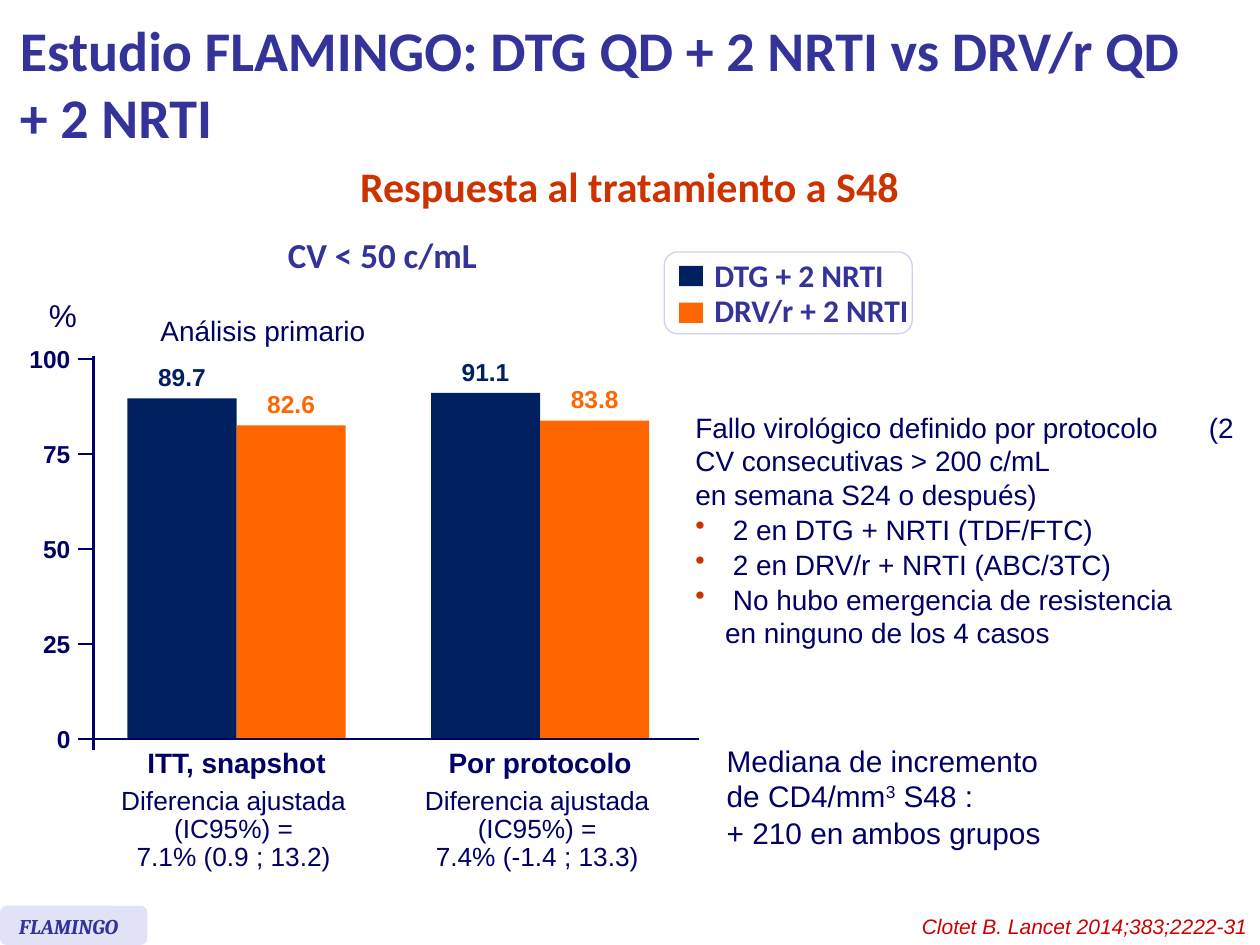
from copy import deepcopy

from lxml import etree
from pptx import Presentation
from pptx import util as u
from pptx.dml.color import RGBColor
from pptx.enum import shapes, text
from pptx.oxml.ns import qn

NAVY, DARK, ORANGE = "000066", "002060", "FF6600"
VIOLET, RED = "333399", "CC3300"
LEFT, MID, RIGHT = text.PP_ALIGN.LEFT, text.PP_ALIGN.CENTER, text.PP_ALIGN.RIGHT

# Chart scale, in cm
BASE, UNIT = 14.9, 0.0766
BAR, FIRST, STEP = 2.2, 2.57, 6.12

GROUPS = [
    ("ITT, snapshot", (89.7, 82.6), "7.1% (0.9 ; 13.2)"),
    ("Por protocolo", (91.1, 83.8), "7.4% (-1.4 ; 13.3)"),
]
SERIES = [("DTG + 2 NRTI", DARK), ("DRV/r + 2 NRTI", ORANGE)]


def rgb(code):
    return RGBColor.from_string(code)


def cm(*vals):
    return [u.Cm(v) for v in vals]


def style(run, size, color, name="Arial", **more):
    for key, val in {"size": u.Pt(size), "name": name, **more}.items():
        setattr(run.font, key, val)
    run.font.color.rgb = rgb(color)


def bullet(para):
    """Give a paragraph a red round bullet with a hanging indent."""
    props = para._p.get_or_add_pPr()
    props.set("marL", str(u.Cm(0.6)))
    props.set("indent", str(-u.Cm(0.6)))
    tint = etree.SubElement(props, qn("a:buClr"))
    etree.SubElement(tint, qn("a:srgbClr")).set("val", RED)
    etree.SubElement(props, qn("a:buChar")).set("char", "•")


def tab(para, pos):
    """Set one left tab stop."""
    stops = etree.SubElement(para._p.get_or_add_pPr(), qn("a:tabLst"))
    stop = etree.SubElement(stops, qn("a:tab"))
    stop.set("pos", str(u.Cm(pos)))
    stop.set("algn", "l")


def label(slide, at, lines, size, color, align=LEFT, wrap=True, mid=False,
          inset=None, gap=0, lead=None, dots=(), stop=None, **font):
    """Add a text box; each line is one paragraph, and \\v breaks a line."""
    frame = slide.shapes.add_textbox(*cm(*at)).text_frame
    frame.word_wrap = wrap
    if mid:
        frame.vertical_anchor = text.MSO_ANCHOR.MIDDLE
    if inset is not None:
        for side in ("left", "top", "right", "bottom"):
            setattr(frame, "margin_" + side, u.Cm(inset))
    for i, line in enumerate(lines):
        para = frame.paragraphs[0] if i == 0 else frame.add_paragraph()
        para.alignment = align
        if lead:
            para.line_spacing = lead
        if i and gap:
            para.space_before = u.Pt(gap)
        if i in dots:
            bullet(para)
        if i == 0 and stop:
            tab(para, stop)
        para.text = line
        for run in para.runs:
            style(run, size, color, **font)
        for brk in para._p.findall(qn("a:br")):
            brk.insert(0, deepcopy(para.runs[0]._r.rPr))
    return frame


def block(slide, at, fill, edge=None, kind=shapes.MSO_SHAPE.RECTANGLE):
    box = slide.shapes.add_shape(kind, *cm(*at))
    box.shadow.inherit = False
    box.fill.solid()
    box.fill.fore_color.rgb = rgb(fill)
    if edge:
        box.line.color.rgb = rgb(edge)
        box.line.width = u.Pt(0.75)
    else:
        box.line.fill.background()


def rule(slide, *ends):
    line = slide.shapes.add_connector(shapes.MSO_CONNECTOR.STRAIGHT, *cm(*ends))
    line.line.color.rgb = rgb(NAVY)
    line.line.width = u.Pt(1.5)
    etree.SubElement(line._element.spPr, qn("a:effectLst"))


def bars(slide):
    for i, (name, vals, diff) in enumerate(GROUPS):
        left = FIRST + i * STEP
        mid = left + BAR
        for j, (val, (_, color)) in enumerate(zip(vals, SERIES)):
            x, tall = left + j * BAR, val * UNIT
            block(slide, (x, BASE - tall, BAR, tall), color)
            label(slide, (x + 0.36, BASE - tall - 0.98, 1.48, 1.12), [str(val)],
                  14, color, MID, wrap=False, inset=0.25, bold=True)
        label(slide, (mid - 2.1, 14.91, 4.2, 0.94), [name], 16, NAVY, MID,
              wrap=False, bold=True)
        label(slide, (mid - 2.6, 15.75, 5.08, 2.01),
              ["Diferencia ajustada", "(IC95%) =", diff], 15, NAVY, MID,
              wrap=False, lead=0.9)


def axes(slide):
    for val in range(0, 101, 25):
        y = BASE - val * UNIT
        label(slide, (0.42, y - 0.3, 1, 0.6), [str(val)], 14, NAVY, RIGHT,
              mid=True, inset=0, bold=True)
        if val:
            rule(slide, 1.57, y, 1.9, y)
    rule(slide, 1.89, 7.18, 1.89, 15.11)
    rule(slide, 1.57, BASE, 14.1, BASE)
    label(slide, (0.71, 5.84, 1.09, 1.02), ["%"], 18, NAVY, RIGHT, wrap=False)


def legend(slide):
    block(slide, (13.39, 5.08, 5, 1.65), "FFFFFF", "D0D0F0",
          shapes.MSO_SHAPE.ROUNDED_RECTANGLE)
    for i, (name, color) in enumerate(SERIES):
        block(slide, (13.69, 5.36 + i * 0.74, 0.48, 0.41), color)
        label(slide, (14.15, 5.03 + i * 0.71, 4.47, 1.02), [name], 18, VIOLET,
              name="Calibri", bold=True, wrap=True)


def notes(slide):
    label(slide, (13.77, 8.1, 11.43, 5.16), [
        "Fallo virológico definido por protocolo\t(2 CV consecutivas > 200 c/mL"
        "\ven semana S24 o después)",
        " 2 en DTG + NRTI (TDF/FTC)",
        " 2 en DRV/r + NRTI (ABC/3TC)",
        " No hubo emergencia de resistencia\ven ninguno de los 4 casos",
    ], 16, NAVY, mid=True, gap=0.8, dots=(1, 2, 3), stop=10.35)
    frame = label(slide, (14.4, 14.83, 10.13, 2.46), [
        "Mediana de incremento\vde CD4/mm", "+ 210 en ambos grupos",
    ], 17, NAVY, mid=True, gap=0.85)
    for part, lift in (("3", "30000"), (" S48 :", "0")):
        run = frame.paragraphs[0].add_run()
        run.text = part
        style(run, 17, NAVY)
        run.font._element.set("baseline", lift)


def main():
    prs = Presentation()
    prs.slide_width, prs.slide_height = cm(25.4, 19.05)
    slide = prs.slides.add_slide(prs.slide_layouts[6])

    # Headings
    head = {"name": "Calibri", "bold": True}
    label(slide, (0.15, 0.13, 24.26, 3.07),
          ["Estudio FLAMINGO: DTG QD + 2 NRTI vs DRV/r QD\v+ 2 NRTI"],
          32, VIOLET, mid=True, **head)
    label(slide, (6.91, 3.12, 11.56, 1.27), ["Respuesta al tratamiento a S48"],
          24, RED, MID, wrap=False, **head)
    label(slide, (3.33, 4.72, 8.76, 0.97), ["CV < 50 c/mL"], 20, VIOLET, MID,
          mid=True, lead=0.8, **head)
    label(slide, (2.95, 6.2, 4.7, 0.94), ["Análisis primario"], 16, NAVY, MID)

    # Bar chart, legend and findings
    bars(slide)
    axes(slide)
    legend(slide)
    notes(slide)

    # Footer
    block(slide, (0, 18.26, 2.97, 0.79), "E2E2F6",
          kind=shapes.MSO_SHAPE.ROUNDED_RECTANGLE)
    label(slide, (0.13, 18.29, 2.84, 0.76), ["FLAMINGO"], 12, VIOLET,
          name="Cambria", bold=True, italic=True)
    label(slide, (17.78, 18.29, 7.62, 0.76),
          ["Clotet B. Lancet 2014;383;2222-31"], 12, "CC0000", RIGHT, italic=True)
    prs.save("out.pptx")


if __name__ == "__main__":
    main()
